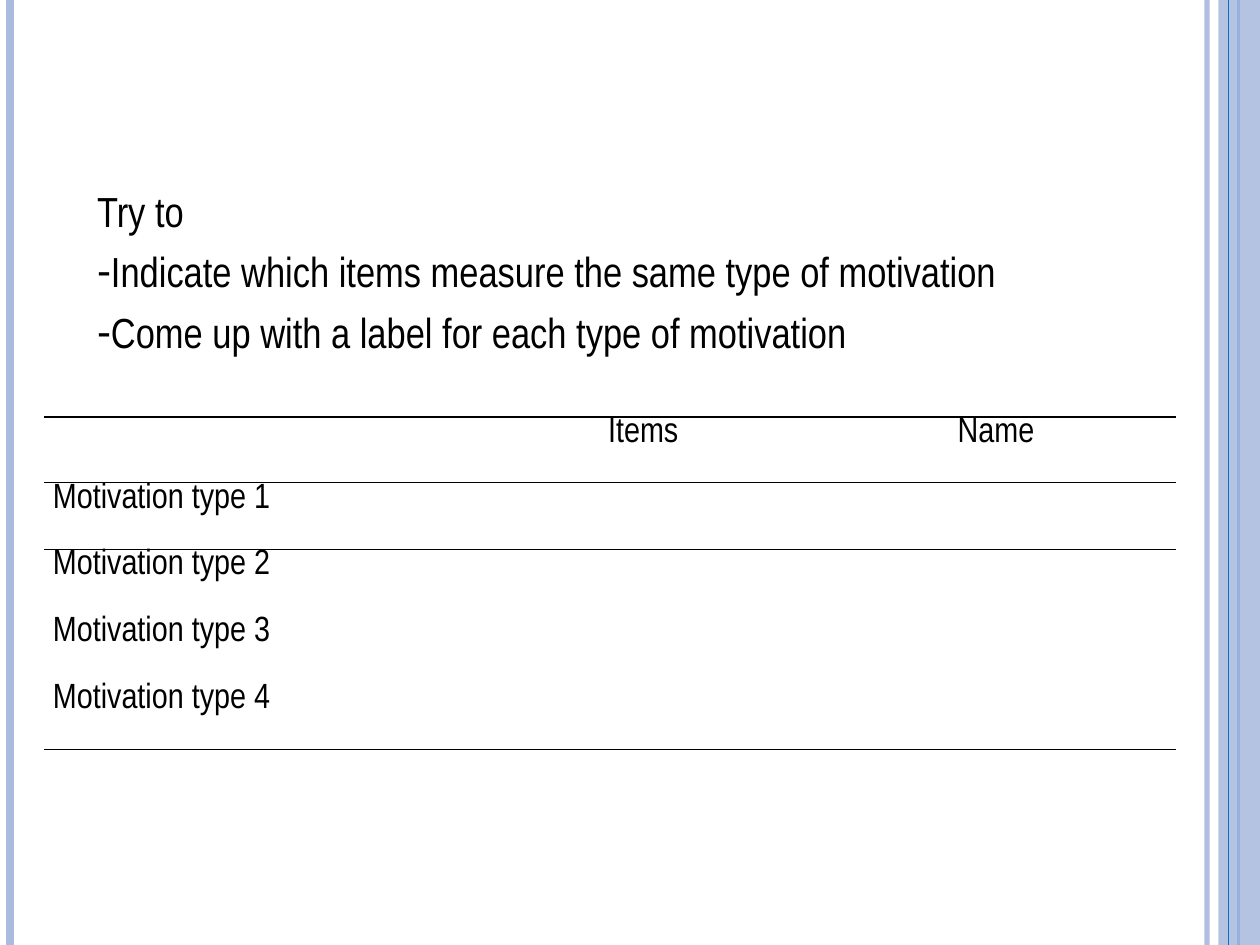
import pptx
import pptx.dml.color
import pptx.enum.shapes
import pptx.enum.text
import pptx.oxml
import pptx.oxml.ns
import pptx.util
from lxml import etree

Inches = pptx.util.Inches
Pt = pptx.util.Pt
qn = pptx.oxml.ns.qn

PALE, BLUE, BLACK = "ABBBDF", "0F6FC6", "000000"
NO_STYLE_NO_GRID = "{2D5ABB26-0587-4C30-8999-92F81FD0307C}"


def rgb(value):
    return pptx.dml.color.RGBColor.from_string(value)


def set_alpha(fill_parent, percent):
    color = fill_parent.find(qn("a:solidFill"))[0]
    etree.SubElement(color, qn("a:alpha"), val=str(percent * 1000))


class SlideBuilder:
    font = "Arial Narrow"

    def __init__(self, page):
        self.page = page

    def style(self, para, size):
        para.font.name = self.font
        para.font.size = Pt(size)
        para.font.color.rgb = rgb(BLACK)

    def vertical_line(self, x, color, width, alpha=None):
        line = self.page.shapes.add_connector(
            pptx.enum.shapes.MSO_CONNECTOR.STRAIGHT,
            Inches(x), 0, Inches(x), Inches(7.5))
        line.line.color.rgb = rgb(color)
        line.line.width = Pt(width)
        properties = line._element.spPr
        if alpha:
            set_alpha(properties.find(qn("a:ln")), alpha)
        etree.SubElement(properties, qn("a:effectLst"))

    def band(self, left, width, color, alpha):
        band = self.page.shapes.add_shape(
            pptx.enum.shapes.MSO_SHAPE.RECTANGLE,
            Inches(left), 0, Inches(width), Inches(7.5))
        band.shadow.inherit = False
        band.fill.solid()
        band.fill.fore_color.rgb = rgb(color)
        set_alpha(band._element.spPr, alpha)
        band.line.fill.background()

    def instructions(self, box, items):
        box.left, box.top = Inches(0.67), Inches(1.42)
        box.width, box.height = Inches(8.67), Inches(1.5)
        frame = box.text_frame
        frame.word_wrap = True
        frame.auto_size = pptx.enum.text.MSO_AUTO_SIZE.NONE
        for index, (text, bullet) in enumerate(items):
            para = frame.add_paragraph() if index else frame.paragraphs[0]
            para.text = text
            para.space_before = Pt(5.8 if index else 0)
            properties = para._p.get_or_add_pPr()
            properties.set("marL", "0")
            properties.set("indent", "0")
            if bullet:
                etree.SubElement(properties, qn("a:buChar"), char=bullet)
            else:
                etree.SubElement(properties, qn("a:buNone"))
            self.style(para, 24)

    def cell_border(self, cell, side):
        cell._tc.get_or_add_tcPr().append(pptx.oxml.parse_xml(
            f'<a:{side} {pptx.oxml.ns.nsdecls("a")} w="{Pt(1)}"><a:solidFill>'
            f'<a:srgbClr val="{BLACK}"/></a:solidFill></a:{side}>'))

    def table(self, left, top, widths, heights, rows):
        table = self.page.shapes.add_table(
            len(rows), len(widths), Inches(left), Inches(top),
            Inches(sum(widths)), Inches(sum(heights))).table
        table.first_row = table.horz_banding = False
        table._tbl.tblPr.find(qn("a:tableStyleId")).text = NO_STYLE_NO_GRID
        for column, width in zip(table.columns, widths):
            column.width = Inches(width)
        for index, (row, height) in enumerate(zip(rows, heights)):
            table.rows[index].height = Inches(height)
            for cell, text in zip(table.rows[index].cells, row):
                cell.margin_left = cell.margin_right = Inches(0.07)
                cell.margin_top = cell.margin_bottom = 0
                para = cell.text_frame.paragraphs[0]
                para.text = text
                if index == 0:
                    para.alignment = pptx.enum.text.PP_ALIGN.CENTER
                self.style(para, 20)
                # Rules above and below the header, and under the last row
                if index <= 1:
                    self.cell_border(cell, "lnT")
                if index in (0, len(rows) - 1):
                    self.cell_border(cell, "lnB")


def main():
    deck = pptx.Presentation()
    deck.slide_width, deck.slide_height = Inches(10), Inches(7.5)
    page = deck.slides.add_slide(deck.slide_layouts[1])
    title = page.shapes.title._element
    title.getparent().remove(title)
    builder = SlideBuilder(page)

    # Side decoration
    builder.vertical_line(9.58, PALE, 3, alpha=93)
    builder.vertical_line(0.08, PALE, 4.5)
    builder.vertical_line(9.83, BLUE, 1.5)
    builder.band(9.67, 0.33, PALE, alpha=87)
    builder.vertical_line(9.75, BLUE, 0.75)

    # Answer table
    types = [[f"Motivation type {number}", "", ""] for number in range(1, 5)]
    builder.table(0.35, 3.31, [3.38, 2.75, 2.85], [0.52] + [0.53] * 4,
                  [["", "Items", "Name"]] + types)

    # Instructions
    builder.instructions(page.placeholders[1], [
        ("Try to", None),
        ("Indicate which items measure the same type of motivation", "-"),
        ("Come up with a label for each type of motivation", "-"),
    ])

    deck.save("out.pptx")


if __name__ == "__main__":
    main()
